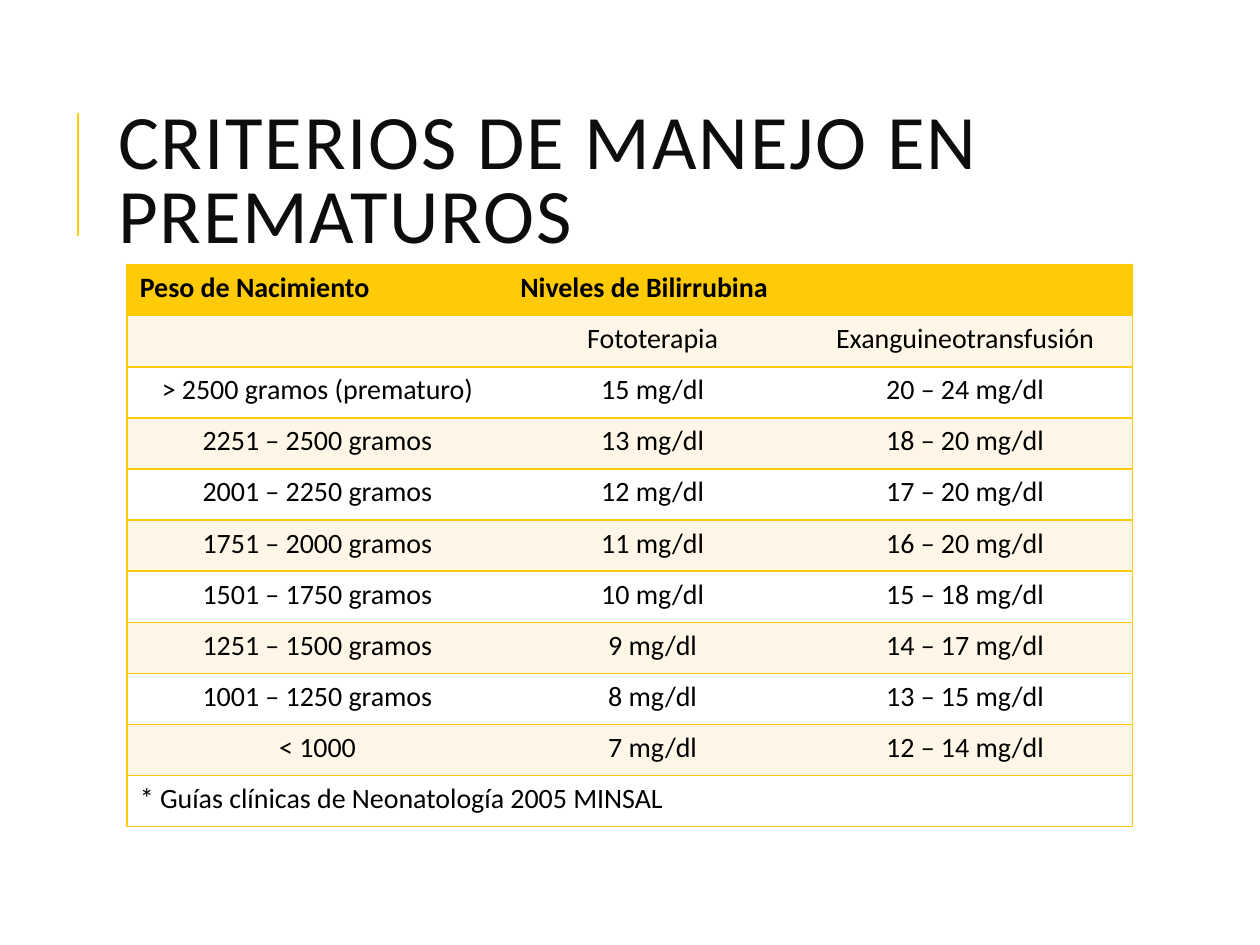
from lxml.etree import SubElement
from pptx import Presentation
from pptx.dml.color import RGBColor
from pptx.enum.shapes import MSO_CONNECTOR as Connector
from pptx.enum.text import MSO_ANCHOR as Anchor, PP_ALIGN as Align
from pptx.oxml import parse_xml
from pptx.oxml.ns import nsdecls, qn
from pptx.util import Inches, Pt

GOLD = RGBColor(0xFF, 0xCA, 0x08)
CREAM = RGBColor(0xFF, 0xF6, 0xE7)
WHITE = RGBColor(0xFF, 0xFF, 0xFF)
BLACK = RGBColor(0, 0, 0)
INK = RGBColor(0x0D, 0x0D, 0x0D)
FONT = "Calibri"
WIDTH, HEIGHT = Inches(10), Inches(7.5)
COLUMN_WIDTHS = (3.02, 2.3, 2.66)

HEADER = ("Peso de Nacimiento", "Niveles de Bilirrubina", "")
CRITERIA = [
    ("", "Fototerapia", "Exanguineotransfusión"),
    ("> 2500 gramos (prematuro)", "15 mg/dl", "20 – 24 mg/dl"),
    ("2251 – 2500 gramos", "13 mg/dl", "18 – 20 mg/dl"),
    ("2001 – 2250 gramos", "12 mg/dl", "17 – 20 mg/dl"),
    ("1751 – 2000 gramos", "11 mg/dl", "16 – 20 mg/dl"),
    ("1501 – 1750 gramos", "10 mg/dl", "15 – 18 mg/dl"),
    ("1251 – 1500 gramos", "9 mg/dl", "14 – 17 mg/dl"),
    ("1001 – 1250 gramos", "8 mg/dl", "13 – 15 mg/dl"),
    ("< 1000", "7 mg/dl", "12 – 14 mg/dl"),
]
FOOTNOTE = ("* Guías clínicas de Neonatología 2005 MINSAL", "", "")


def share(left, top, width, height):
    return (round(WIDTH * left), round(HEIGHT * top),
            round(WIDTH * width), round(HEIGHT * height))


def style_text(para, size, color, bold=False):
    for span in para.runs:
        span.font.name = FONT
        span.font.size = Pt(size)
        span.font.bold = bold
        span.font.color.rgb = color


def add_accent(page, left, top, width, height):
    accent = page.shapes.add_connector(
        Connector.STRAIGHT, left, top + height, left + width, top)
    accent.line.color.rgb = GOLD
    accent.line.width = Pt(1.5)
    SubElement(accent._element.spPr, qn("a:effectLst"))


def add_title(page, left, top, width, height):
    box = page.shapes.add_textbox(left, top, width, height)
    frame = box.text_frame
    frame.word_wrap = True
    frame.vertical_anchor = Anchor.MIDDLE
    frame.text = "CRITERIOS DE MANEJO EN PREMATUROS"
    para = frame.paragraphs[0]
    para.line_spacing = 0.8
    style_text(para, 44, INK)
    for span in para.runs:
        span.font._element.set("spc", "100")


def set_borders(cell, visible):
    properties = cell._tc.get_or_add_tcPr()
    for position, side in enumerate("LRTB"):
        paint = (f'<a:solidFill><a:srgbClr val="{GOLD}"/></a:solidFill>'
                 if side in visible else "<a:noFill/>")
        properties.insert(position, parse_xml(
            f'<a:ln{side} {nsdecls("a")} w="{Pt(1)}">{paint}</a:ln{side}>'))


def add_criteria_table(page, left, top, width, height):
    rows = [HEADER, *CRITERIA, FOOTNOTE]
    last_row, last_column = len(rows) - 1, len(COLUMN_WIDTHS) - 1
    table = page.shapes.add_table(
        len(rows), len(COLUMN_WIDTHS), left, top, width, height).table
    table.horz_banding = False
    for column, column_width in zip(table.columns, COLUMN_WIDTHS):
        column.width = round(width * column_width / sum(COLUMN_WIDTHS))
    for row, texts in enumerate(rows):
        is_header = row == 0
        fill = GOLD if is_header else CREAM if row % 2 else WHITE
        for column, text in enumerate(texts):
            cell = table.cell(row, column)
            cell.fill.solid()
            cell.fill.fore_color.rgb = fill
            sides = "TB" + "L" * (column == 0) + "R" * (column == last_column)
            set_borders(cell, sides)
            cell.text = text
            para = cell.text_frame.paragraphs[0]
            para.font.size = Pt(16)
            para.alignment = Align.LEFT if row in (0, last_row) else Align.CENTER
            style_text(para, 16, BLACK, is_header)
    for row, column in ((0, 1), (last_row, 0)):
        table.cell(row, column).merge(table.cell(row, last_column))
        set_merged = table.cell(row, column)._tc.tcPr
        right = set_merged.find(qn("a:lnR"))
        edge = table.cell(row, last_column)._tc.tcPr.find(qn("a:lnR"))
        set_merged.replace(right, edge)


def main():
    deck = Presentation()
    deck.slide_width, deck.slide_height = WIDTH, HEIGHT
    page = deck.slides.add_slide(deck.slide_layouts[6])
    add_accent(page, *share(0.062, 0.12, 0, 0.13))
    add_title(page, *share(0.084, 0.085, 0.797, 0.22))
    add_criteria_table(page, *share(0.101, 0.28, 0.798, 0.595))
    deck.save("out.pptx")


if __name__ == "__main__":
    main()
